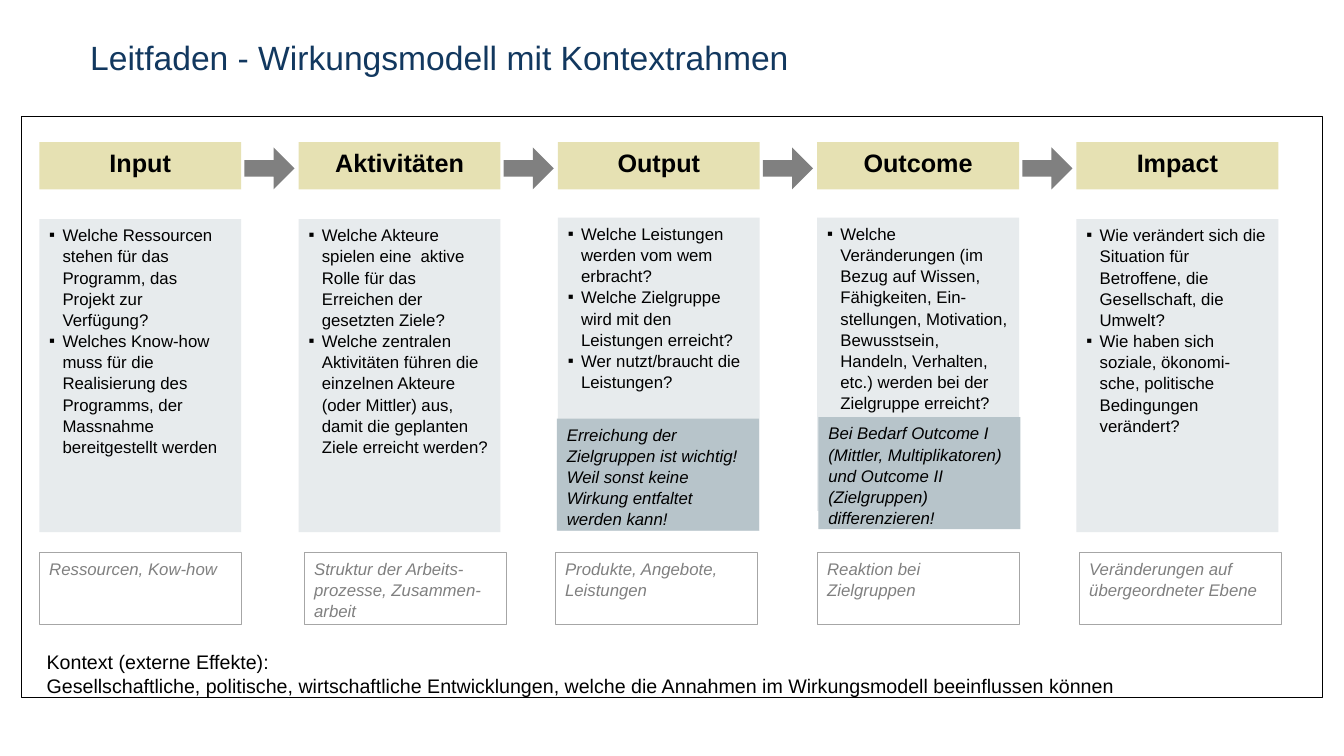
from lxml import etree
from pptx import Presentation
from pptx import util as u
from pptx.dml.color import RGBColor
from pptx.enum import shapes, text
from pptx.oxml.ns import qn

Pt = u.Pt
HUES = {"navy": "12385F", "sand": "E6E1B3", "pale": "E7EBED", "steel": "B7C4CA",
        "grey": "808080", "rule": "A6A6A6", "black": "000000"}
LEFT, WIDE, STEP = 28.1, 144.2, 185.2
STAGES = [
    ("Input", 156.5, 223.7,
     ["Welche Ressourcen stehen für das Programm, das Projekt zur Verfügung?",
      "Welches Know-how muss für die Realisierung des Programms, der Massnahme "
      "bereitgestellt werden"],
     "Ressourcen, Kow-how", 0),
    ("Aktivitäten", 156.5, 223.7,
     ["Welche Akteure spielen eine  aktive Rolle für das Erreichen der gesetzten Ziele?",
      "Welche zentralen Aktivitäten führen die einzelnen Akteure (oder Mittler) aus, "
      "damit die geplanten Ziele erreicht werden?"],
     "Struktur der Arbeits-prozesse, Zusammen-arbeit", 4),
    ("Output", 155.5, 223.7,
     ["Welche Leistungen werden vom wem erbracht?",
      "Welche Zielgruppe wird mit den Leistungen erreicht?",
      "Wer nutzt/braucht die Leistungen?"],
     "Produkte, Angebote, Leistungen", -2),
    ("Outcome", 155.5, 209.5,
     ["Welche Veränderungen (im Bezug auf Wissen, Fähigkeiten, Ein-stellungen, Motivation, "
      "Bewusstsein, Handeln, Verhalten, etc.) werden bei der Zielgruppe erreicht?"],
     "Reaktion bei Zielgruppen", 0),
    ("Impact", 156.5, 223.7,
     ["Wie verändert sich die Situation für Betroffene, die Gesellschaft, die Umwelt?",
      "Wie haben sich soziale, ökonomi-sche, politische Bedingungen verändert?"],
     "Veränderungen auf übergeordneter Ebene", 2),
]
HINTS = [
    (397.8, 299, "Erreichung der Zielgruppen ist wichtig! Weil sonst keine Wirkung "
                 "entfaltet werden kann!"),
    (584.6, 298, "Bei Bedarf Outcome I (Mittler, Multiplikatoren) und Outcome II "
                 "(Zielgruppen) differenzieren!"),
]


def hue(name):
    """Return the named colour."""
    return RGBColor.from_string(HUES[name])


def style(frame, size, tint, bold=False, slant=False, lead=1.0):
    """Format every run of a text frame."""
    frame.word_wrap = True
    frame.vertical_anchor = text.MSO_ANCHOR.TOP
    for para in frame.paragraphs:
        para.alignment = text.PP_ALIGN.LEFT
        para.line_spacing = lead
        for run in para.runs:
            font = run.font
            font.name, font.size = "Arial", Pt(size)
            font.bold, font.italic = bold, slant
            font.color.rgb = hue(tint)


def strip(frame):
    """Set the insets of a text frame to zero."""
    frame.margin_left = frame.margin_right = Pt(0)
    frame.margin_top = frame.margin_bottom = Pt(0)


def shape(slide, kind, area, fill=None, line=None, weight=0.25):
    """Add a flat preset shape with an optional fill and outline."""
    item = slide.shapes.add_shape(kind, *map(Pt, area))
    item.shadow.inherit = False
    if fill:
        item.fill.solid()
        item.fill.fore_color.rgb = hue(fill)
    else:
        item.fill.background()
    if line:
        item.line.color.rgb = hue(line)
        item.line.width = Pt(weight)
    else:
        item.line.fill.background()
    return item


def box(slide, area, **look):
    """Add a flat rectangle."""
    return shape(slide, shapes.MSO_SHAPE.RECTANGLE, area, **look)


def title(slide, words):
    """Place and format the slide title."""
    item = slide.shapes.title
    item.left, item.top, item.width, item.height = map(Pt, (64.4, 26.6, 666, 67.7))
    frame = item.text_frame
    frame.text = words
    strip(frame)
    style(frame, 24, "navy")


def head(slide, x, words):
    """Add the heading of a stage."""
    frame = box(slide, (x, 101.5, WIDE, 33.8), fill="sand").text_frame
    frame.text = words
    style(frame, 18, "black", bold=True)
    frame.paragraphs[0].alignment = text.PP_ALIGN.CENTER


def points(slide, area, items):
    """Add a panel with a bulleted list."""
    frame = box(slide, area, fill="pale").text_frame
    frame.text = "\n".join(items)
    style(frame, 12, "black", lead=1.05)
    for para in frame.paragraphs:
        props = para._p.get_or_add_pPr()
        props.set("marL", str(Pt(9.5)))
        props.set("indent", str(-Pt(9.5)))
        etree.SubElement(props, qn("a:buFont")).set("typeface", "Arial")
        etree.SubElement(props, qn("a:buChar")).set("char", "▪")


def note(slide, area, words, tint, **look):
    """Add a box with a remark in italics."""
    frame = box(slide, area, **look).text_frame
    frame.text = words
    style(frame, 12, tint, slant=True, lead=1.05)


def arrow(slide, x):
    """Add an arrow between two stages."""
    item = shape(slide, shapes.MSO_SHAPE.RIGHT_ARROW, (x, 105.3, 35.8, 30), fill="grey")
    item.adjustments[0] = 0.39
    item.adjustments[1] = 0.5


def label(slide, area, words):
    """Add the plain text on the context."""
    frame = slide.shapes.add_textbox(*map(Pt, area)).text_frame
    frame.text = words
    strip(frame)
    style(frame, 14, "black", lead=1.05)


def main():
    """Build the slide and save it."""
    deck = Presentation()
    deck.slide_width, deck.slide_height = Pt(960), Pt(540)
    slide = deck.slides.add_slide(deck.slide_layouts[5])
    title(slide, "Leitfaden - Wirkungsmodell mit Kontextrahmen")
    box(slide, (15.3, 83, 929.2, 415.6), line="black", weight=0.75)
    for i, (name, top, high, items, result, shift) in enumerate(STAGES):
        x = LEFT + i * STEP
        head(slide, x, name)
        points(slide, (x, top, WIDE, high), items)
        note(slide, (x + shift, 394.6, WIDE, 51), result, "grey", line="rule")
        if i:
            arrow(slide, x - 38.7)
    for x, y, words in HINTS:
        note(slide, (x, y, WIDE, 80), words, "black", fill="steel")
    label(slide, (33.3, 463.2, 888, 34), "Kontext (externe Effekte):\v"
          "Gesellschaftliche, politische, wirtschaftliche Entwicklungen, "
          "welche die Annahmen im Wirkungsmodell beeinflussen können")
    deck.save("out.pptx")


if __name__ == "__main__":
    main()
